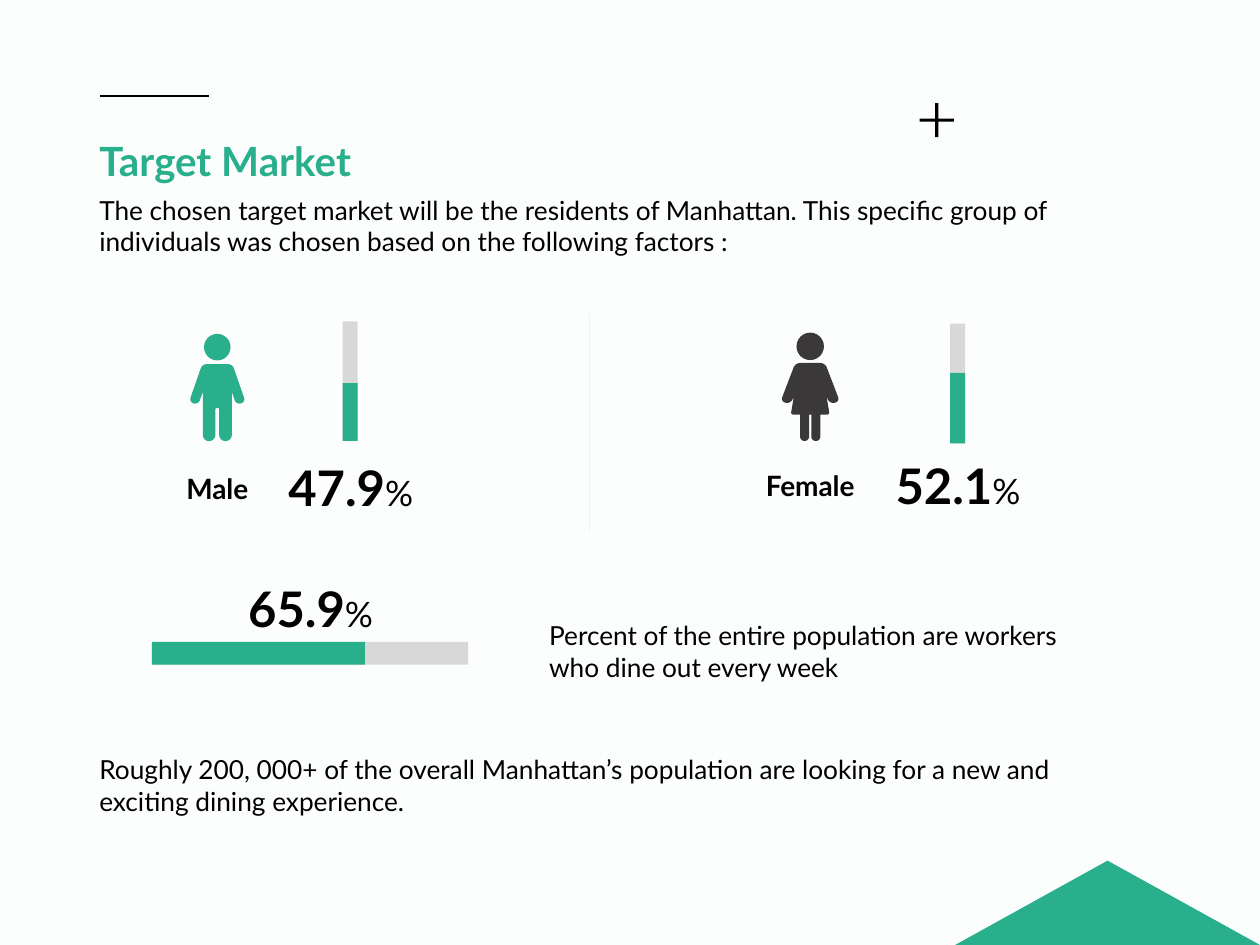
from math import hypot

from lxml.etree import SubElement
from pptx import Presentation
from pptx.dml.color import RGBColor
from pptx.enum.shapes import MSO_CONNECTOR as Connector, MSO_SHAPE as Shape
from pptx.enum.text import PP_ALIGN as Align
from pptx.oxml.ns import qn
from pptx.util import Pt

PAPER = RGBColor(0xFC, 0xFE, 0xFD)
GREEN = RGBColor(0x29, 0xAF, 0x8C)
BLACK = RGBColor(0, 0, 0)
CHARCOAL = RGBColor(0x3A, 0x38, 0x38)
TRACK = RGBColor(0xD8, 0xD8, 0xD8)
DIVIDER = RGBColor(0xF2, 0xF2, 0xF2)

BODY = {"size": Pt(15), "bold": False}
TITLE = {"size": Pt(23), "bold": True}
LABEL = {"size": Pt(16), "bold": True}
FIGURE = {"size": Pt(28), "bold": True}
PERCENT = {"size": Pt(20), "bold": False}

MALE_HALF = [(8.6, 0, 2.5), (16.2, 21.8, 2.8), (10.8, 23.2, 2.8), (8.3, 15.8, 0),
             (8.3, 44, 3.6), (1.1, 44, 3.6), (1.1, 25.2, 0.5)]
FEMALE_HALF = [(8.5, 0, 2.7), (16.9, 22, 2.6), (11.4, 23.4, 2.6), (9.4, 19.4, 0),
               (11.1, 29.5, 1.5), (5.8, 29.5, 0), (5.8, 44.6, 2.6),
               (0.6, 44.6, 2.6), (0.6, 29.5, 0)]
CURVE_STEPS = 8
CORNER_PULL = 0.55
UNITS_PER_POINT = 100


def paint(shape, color):
    shape.shadow.inherit = False
    shape.fill.solid()
    shape.fill.fore_color.rgb = color
    shape.line.fill.background()


def add_block(shapes, kind, box, color):
    block = shapes.add_shape(kind, *map(Pt, box))
    paint(block, color)
    return block


def add_text(slide, box, runs, color=BLACK, align=Align.LEFT):
    frame = slide.shapes.add_textbox(*map(Pt, box)).text_frame
    frame.word_wrap = True
    paragraph = frame.paragraphs[0]
    paragraph.alignment = align
    for wording, style in runs:
        run = paragraph.add_run()
        run.text = wording
        for attribute, value in {"name": "Lato", **style}.items():
            setattr(run.font, attribute, value)
        run.font.color.rgb = color


def add_share(slide, left, top, share):
    runs = [(share, FIGURE), ("%", PERCENT)]
    add_text(slide, (left, top, 91.4, 41), runs, align=Align.CENTER)


def add_rule(slide, start, end, color, weight):
    rule = slide.shapes.add_connector(Connector.STRAIGHT, *map(Pt, start + end))
    rule.line.color.rgb = color
    rule.line.width = Pt(weight)
    SubElement(rule._element.spPr, qn("a:effectLst"))


def add_bar(slide, track, filled):
    group = slide.shapes.add_group_shape()
    for box, color in ((track, TRACK), (filled, GREEN)):
        add_block(group.shapes, Shape.RECTANGLE, box, color)


def toward(corner, neighbour, distance):
    ratio = distance / hypot(neighbour[0] - corner[0], neighbour[1] - corner[1])
    return [c + (n - c) * ratio for c, n in zip(corner[:2], neighbour[:2])]


def rounded_outline(half):
    corners = half + [(-x, y, radius) for x, y, radius in reversed(half)]
    points = []
    for i, corner in enumerate(corners):
        radius = corner[2]
        if not radius:
            points.append(corner[:2])
            continue
        entry = toward(corner, corners[i - 1], radius)
        leave = toward(corner, corners[(i + 1) % len(corners)], radius)
        pulls = [toward(corner, side, radius * (1 - CORNER_PULL)) for side in (entry, leave)]
        for step in range(CURVE_STEPS + 1):
            t = step / CURVE_STEPS
            weights = ((1 - t) ** 3, 3 * t * (1 - t) ** 2, 3 * t * t * (1 - t), t ** 3)
            controls = (entry, *pulls, leave)
            points.append([sum(w * c[axis] for w, c in zip(weights, controls))
                           for axis in (0, 1)])
    return points


def add_person(slide, axis, shoulder, half, head_top, head_size, color):
    group = slide.shapes.add_group_shape()
    outline = [(x * UNITS_PER_POINT, y * UNITS_PER_POINT) for x, y in rounded_outline(half)]
    builder = group.shapes.build_freeform(*outline[0], scale=Pt(1) / UNITS_PER_POINT)
    builder.add_line_segments(outline[1:], close=True)
    paint(builder.convert_to_shape(Pt(axis), Pt(shoulder)), color)
    head = (axis - head_size / 2, head_top, head_size, head_size)
    add_block(group.shapes, Shape.OVAL, head, color)


def main():
    deck = Presentation()
    deck.slide_width, deck.slide_height = Pt(720), Pt(540)
    slide = deck.slides.add_slide(deck.slide_layouts[6])
    slide.background.fill.solid()
    slide.background.fill.fore_color.rgb = PAPER

    add_text(slide, (49.7, 107.3, 571.7, 43.9),
             [("The chosen target market will be the residents of Manhattan. This specific "
               "group of individuals was chosen based on the following factors :", BODY)])
    add_text(slide, (49.7, 74.2, 175.7, 35.3), [("Target Market", TITLE)], GREEN)
    add_text(slide, (49.7, 427, 571.7, 43.9),
             [("Roughly 200, 000+ of the overall Manhattan’s population are looking for "
               "a new and exciting dining experience.", BODY)])
    add_text(slide, (306.7, 350.6, 320.4, 43.9),
             [("Percent of the entire population are workers who dine out every week", BODY)])
    add_rule(slide, (337, 179.3), (337, 303.8), DIVIDER, 0.75)

    add_person(slide, 124.2, 208.1, MALE_HALF, 190.8, 15.2, GREEN)
    add_person(slide, 463, 207.4, FEMALE_HALF, 190.1, 15.7, CHARCOAL)

    add_text(slide, (93.6, 265.7, 61.2, 26.6), [("Male", LABEL)], align=Align.CENTER)
    add_share(slide, 154.8, 257.8, "47.9")
    add_text(slide, (423.4, 264.2, 79.2, 26.6), [("Female", LABEL)], align=Align.CENTER)
    add_share(slide, 501.8, 257, "52.1")

    add_bar(slide, (195.8, 183.6, 8.6, 68.4), (195.8, 218.9, 8.6, 33.1))
    add_bar(slide, (542.9, 185, 8.6, 68.4), (542.9, 213.1, 8.6, 40.3))
    add_bar(slide, (86.8, 366.8, 180.7, 13), (86.8, 366.8, 121.7, 13))
    add_share(slide, 131.8, 326.9, "65.9")

    plus = add_block(slide.shapes, Shape.MATH_PLUS, (522, 55.4, 26.6, 26.6), BLACK)
    plus.adjustments[0] = 0.07
    add_rule(slide, (56.9, 54.7), (119.5, 54.7), BLACK, 1)
    add_block(slide.shapes, Shape.ISOSCELES_TRIANGLE, (545.8, 491.8, 174.2, 48.2), GREEN)

    deck.save("out.pptx")


if __name__ == "__main__":
    main()
